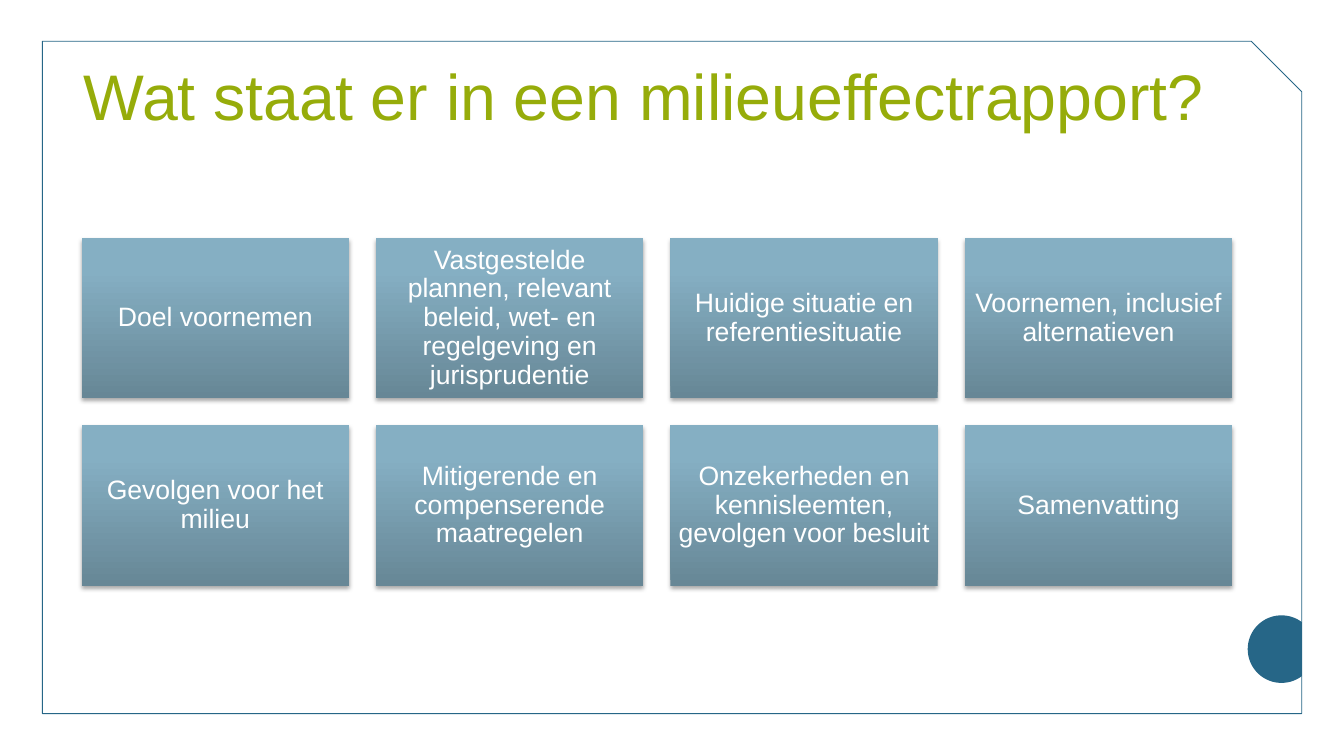
from copy import deepcopy
from math import cos, sin, radians

from pptx import Presentation
from pptx.dml.color import RGBColor
from pptx.enum.shapes import MSO_SHAPE
from pptx.enum.text import MSO_ANCHOR as ANCHOR, PP_ALIGN as ALIGN
from pptx.oxml import parse_xml
from pptx.oxml.ns import nsdecls, qn
from pptx.util import Inches, Pt

COLORS = {
    "frame": "266687",
    "title": "96AC0A",
    "tile_bottom": "678796",
    "tile_mid": "85AFC3",
    "tile_top": "85B0C5",
    "tile_text": "FFFFFF",
    "shadow": "000000",
}
TOPICS = [
    "Doel voornemen",
    "Vastgestelde plannen, relevant beleid, wet- en regelgeving en jurisprudentie",
    "Huidige situatie en referentiesituatie",
    "Voornemen, inclusief alternatieven",
    "Gevolgen voor het milieu",
    "Mitigerende en compenserende maatregelen",
    "Onzekerheden en kennisleemten, gevolgen voor besluit",
    "Samenvatting",
]


def rgb(name):
    return RGBColor.from_string(COLORS[name])


def write(sp, text, size, color, align=ALIGN.LEFT, anchor=ANCHOR.MIDDLE, inset=0):
    tf = sp.text_frame
    tf.word_wrap = True
    tf.vertical_anchor = anchor
    tf.margin_left = tf.margin_right = Inches(inset)
    tf.margin_top = tf.margin_bottom = Inches(inset)
    p = tf.paragraphs[0]
    p.alignment = align
    p.line_spacing = 0.9
    r = p.add_run()
    r.text = text
    r.font.name = "Arial"
    r.font.size = Pt(size)
    r.font.color.rgb = rgb(color)


def add_outline(s, points):
    """Closed freeform through points given in inches."""
    (x0, y0), *rest = points
    builder = s.shapes.build_freeform(Inches(x0), Inches(y0), scale=1.0)
    builder.add_line_segments([(Inches(x), Inches(y)) for x, y in rest], close=True)
    sp = builder.convert_to_shape()
    sp.shadow.inherit = False
    return sp


def add_frame(s, x, y, w, h, cut=0.5):
    # Thin border with a cut top right corner
    right, bottom = x + w, y + h
    border = add_outline(s, [(x, y), (right - cut, y), (right, y + cut),
                             (right, bottom), (x, bottom)])
    border.fill.background()
    border.line.color.rgb = rgb("frame")
    border.line.width = Pt(0.6)

    # Plain disc, cut off by the right border
    radius = 0.335
    cx, cy = right - 0.2, bottom - 0.64
    disc = add_outline(s, [(cx + radius * cos(radians(a)), cy + radius * sin(radians(a)))
                           for a in range(53, 308, 2)])
    disc.fill.solid()
    disc.fill.fore_color.rgb = rgb("frame")
    disc.line.fill.background()


def add_title(s, x, y, w, h):
    sp = s.shapes.add_textbox(Inches(x), Inches(y), Inches(w), Inches(h))
    write(sp, "Wat staat er in een milieueffectrapport?", 46, "title", anchor=ANCHOR.BOTTOM)


def add_tile(s, text, x, y, w, h):
    sp = s.shapes.add_shape(MSO_SHAPE.RECTANGLE, Inches(x), Inches(y), Inches(w), Inches(h))
    sp.line.fill.background()

    # Three-stop gradient, dark at the bottom
    sp.fill.gradient()
    sp.fill.gradient_angle = 90
    stop_list = next(sp.element.spPr.iter(qn("a:gsLst")))
    stop_list.append(deepcopy(stop_list[-1]))
    stops = [(0, "tile_bottom"), (0.8, "tile_mid"), (1, "tile_top")]
    for stop, (position, color) in zip(sp.fill.gradient_stops, stops):
        stop.position = position
        stop.color.rgb = rgb(color)

    # Soft shadow below
    sp.shadow.inherit = False
    sp.element.spPr.find(qn("a:effectLst")).append(parse_xml(
        f'<a:outerShdw {nsdecls("a")} blurRad="{Pt(3.1)}" dist="{Pt(1.8)}" dir="5400000" '
        f'rotWithShape="0"><a:srgbClr val="{COLORS["shadow"]}"><a:alpha val="35000"/>'
        '</a:srgbClr></a:outerShdw>'))

    write(sp, text, 19, "tile_text", align=ALIGN.CENTER, inset=0.08)


def add_tile_grid(s, x, y, w, h, columns=4, rows=2, gap=0.27):
    tile_w = (w - gap * (columns - 1)) / columns
    tile_h = (h - gap * (rows - 1)) / rows
    for i, topic in enumerate(TOPICS):
        row, col = divmod(i, columns)
        add_tile(s, topic, x + col * (tile_w + gap), y + row * (tile_h + gap), tile_w, tile_h)


def main():
    prs = Presentation()
    prs.slide_width, prs.slide_height = Inches(13.33), Inches(7.5)
    s = prs.slides.add_slide(prs.slide_layouts[6])
    add_frame(s, 0.42, 0.41, 12.49, 6.67)
    add_title(s, 0.83, 0.62, 11.42, 0.71)
    add_tile_grid(s, 0.81, 2.36, 11.41, 3.45)
    prs.save("out.pptx")


if __name__ == "__main__":
    main()
